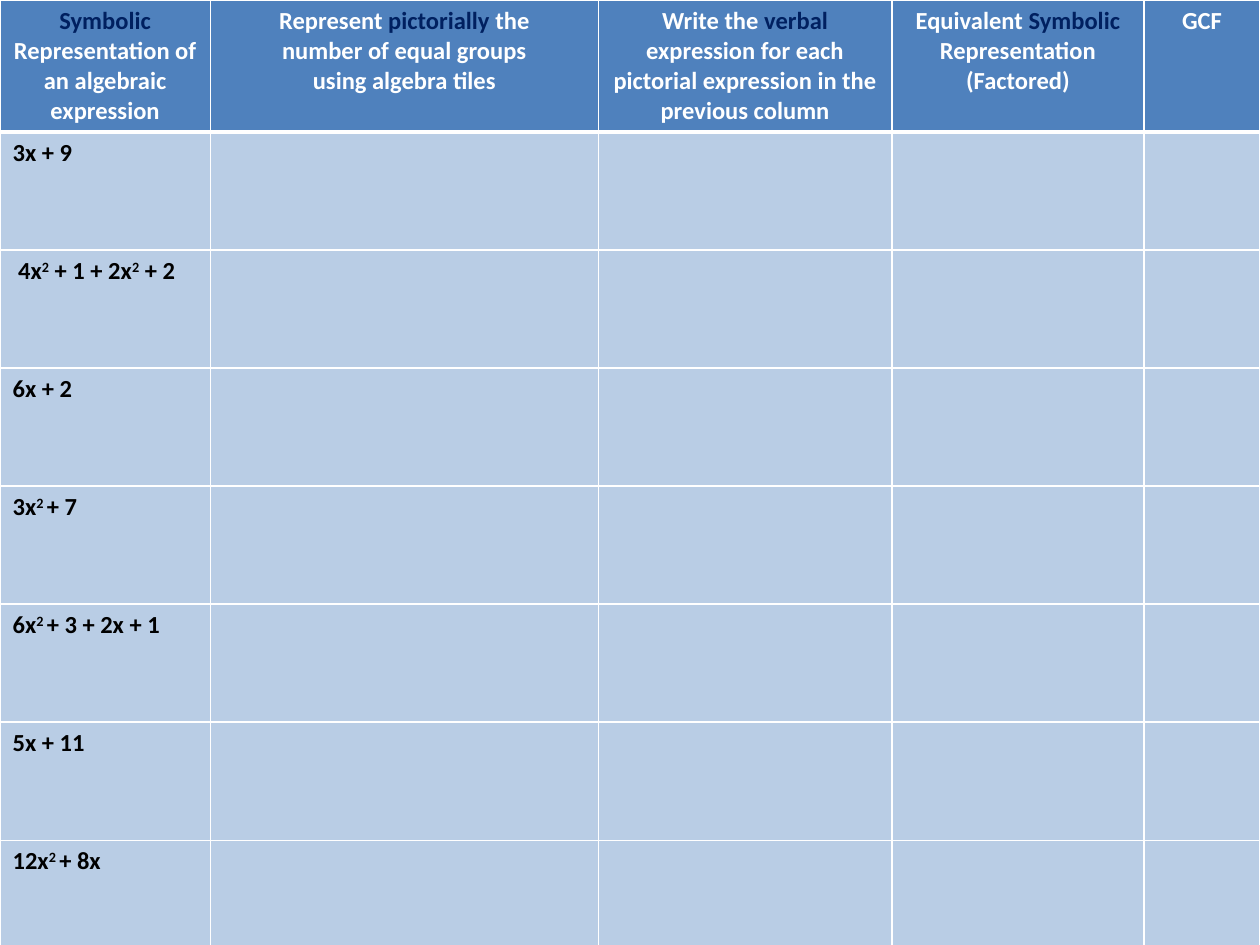
from lxml.etree import SubElement
from pptx import Presentation
from pptx.dml.color import RGBColor
from pptx.enum.text import PP_ALIGN
from pptx.oxml.ns import qn
from pptx.util import Cm, Pt

WHITE = RGBColor(0xFF, 0xFF, 0xFF)
BLACK = RGBColor(0x00, 0x00, 0x00)
NAVY = RGBColor(0x00, 0x20, 0x60)
HEADER_BLUE = RGBColor(0x4F, 0x81, 0xBD)
BODY_BLUE = RGBColor(0xB9, 0xCD, 0xE5)
BACKDROP = RGBColor(0xC6, 0xD9, 0xF1)

# Content: each heading is a list of paragraphs; *word* marks a navy key word
HEADINGS = [
    ["*Symbolic*", "Representation of an algebraic expression"],
    ["Represent *pictorially* the", "number of equal groups", "using algebra tiles"],
    ["Write the *verbal* expression for each pictorial expression in the previous column"],
    ["Equivalent *Symbolic* Representation", "(Factored)"],
    ["GCF"],
]
# ^text^ marks a superscript
EXPRESSIONS = [
    "3x + 9",
    " 4x^2^ + 1 + 2x^2^ + 2",
    "6x + 2",
    "3x^2 ^+ 7",
    "6x^2 ^+ 3 + 2x + 1",
    "5x + 11",
    "12x^2 ^+ 8x",
]
COLUMN_WIDTHS = [4.24, 7.82, 5.92, 5.08, 2.34]
ROW_HEIGHT = 2.38
FONT = {"name": "Calibri", "size": Pt(14), "bold": True}


def add_runs(paragraph, marked, mark, color, marked_color):
    """Split the text at its marks; every second piece is a marked one."""
    for index, piece in enumerate(marked.split(mark)):
        if not piece:
            continue
        run = paragraph.add_run()
        run.text = piece
        for key, value in FONT.items():
            setattr(run.font, key, value)
        is_marked = index % 2 == 1
        run.font.color.rgb = marked_color if is_marked else color
        if is_marked and mark == "^":
            run.font._element.set("baseline", "30000")


def set_borders(cell, widths):
    properties = cell._tc.get_or_add_tcPr()
    for side, width in widths.items():
        line = SubElement(properties, qn(f"a:ln{side}"), w=str(Pt(width)))
        SubElement(SubElement(line, qn("a:solidFill")), qn("a:srgbClr"), val=str(WHITE))


# Slide
deck = Presentation()
deck.slide_width, deck.slide_height = Cm(25.4), Cm(19.05)
slide = deck.slides.add_slide(deck.slide_layouts[6])
slide.background.fill.solid()
slide.background.fill.fore_color.rgb = BACKDROP

# Table grid
row_count = len(EXPRESSIONS) + 1
worksheet = slide.shapes.add_table(
    row_count, len(HEADINGS), 0, 0, Cm(sum(COLUMN_WIDTHS)), Cm(ROW_HEIGHT * row_count)
).table
for column, width in zip(worksheet.columns, COLUMN_WIDTHS):
    column.width = Cm(width)
for row_index, row in enumerate(worksheet.rows):
    row.height = Cm(ROW_HEIGHT)
    for cell in row.cells:
        set_borders(cell, {"L": 1, "R": 1, "T": 3 if row_index == 1 else 1,
                           "B": 3 if row_index == 0 else 1})
        cell.fill.solid()
        cell.fill.fore_color.rgb = BODY_BLUE if row_index else HEADER_BLUE

# Headings
for column_index, heading in enumerate(HEADINGS):
    frame = worksheet.cell(0, column_index).text_frame
    for line_index, text in enumerate(heading):
        paragraph = frame.add_paragraph() if line_index else frame.paragraphs[0]
        paragraph.alignment = PP_ALIGN.CENTER
        add_runs(paragraph, text, "*", WHITE, NAVY)

# Expressions
for row_index, expression in enumerate(EXPRESSIONS, start=1):
    paragraph = worksheet.cell(row_index, 0).text_frame.paragraphs[0]
    add_runs(paragraph, expression, "^", BLACK, BLACK)

deck.save("out.pptx")
